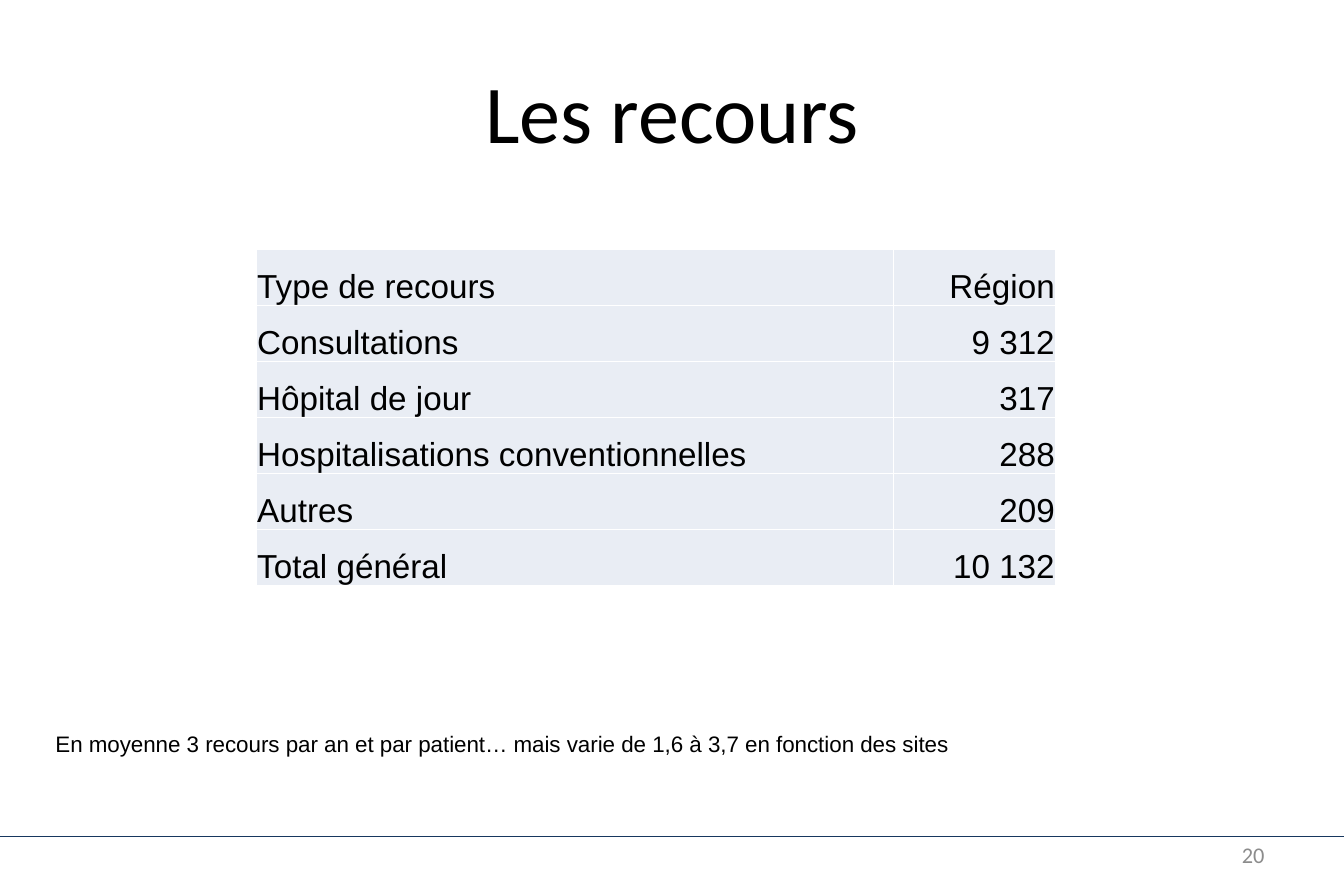
from lxml.etree import SubElement
from pptx import Presentation
from pptx.dml.color import RGBColor
from pptx.enum.shapes import MSO_CONNECTOR
from pptx.enum.text import MSO_ANCHOR, PP_ALIGN
from pptx.oxml.ns import qn
from pptx.util import Cm, Pt

ROWS = [
    ("Type de recours", "Région"),
    ("Consultations", "9 312"),
    ("Hôpital de jour", "317"),
    ("Hospitalisations conventionnelles", "288"),
    ("Autres", "209"),
    ("Total général", "10 132"),
]
WIDTHS = (13.55, 3.45)
HEIGHT = 1.19


def color(code):
    return RGBColor.from_string(code)


def write(frame, text, size, font="Arial", hue="000000", align=PP_ALIGN.LEFT):
    para = frame.paragraphs[0]
    para.alignment = align
    run = para.add_run()
    run.text = text
    run.font.size = Pt(size)
    run.font.name = font
    run.font.color.rgb = color(hue)


def add_text(slide, box, text, size, anchor=MSO_ANCHOR.MIDDLE, wrap=True, **style):
    frame = slide.shapes.add_textbox(*map(Cm, box)).text_frame
    frame.word_wrap = wrap
    frame.vertical_anchor = anchor
    write(frame, text, size, **style)


def add_rule(slide, left, right, top):
    rule = slide.shapes.add_connector(
        MSO_CONNECTOR.STRAIGHT, Cm(left), Cm(top), Cm(right), Cm(top))
    rule.line.color.rgb = color("17375E")
    rule.line.width = Pt(0.25)
    SubElement(rule._element.spPr, qn("a:effectLst"))


def set_edges(cell, hue, width):
    props = cell._tc.get_or_add_tcPr()
    for side in ("lnL", "lnR", "lnT", "lnB"):
        edge = SubElement(props, qn(f"a:{side}"), w=str(Pt(width)))
        fill = SubElement(edge, qn("a:solidFill"))
        SubElement(fill, qn("a:srgbClr"), val=hue)


def fill_cell(cell, text, align):
    cell.margin_left = cell.margin_right = cell.margin_top = Cm(0.02)
    cell.margin_bottom = Cm(0)
    cell.vertical_anchor = MSO_ANCHOR.BOTTOM
    set_edges(cell, "FFFFFF", 1)
    cell.fill.solid()
    cell.fill.fore_color.rgb = color("E9EDF4")
    write(cell.text_frame, text, 20, align=align)


def add_grid(slide, left, top):
    table = slide.shapes.add_table(
        len(ROWS), len(WIDTHS), Cm(left), Cm(top),
        Cm(sum(WIDTHS)), Cm(HEIGHT * len(ROWS))).table
    table.first_row = table.horz_banding = False
    for column, width in zip(table.columns, WIDTHS):
        column.width = Cm(width)
    for row, texts in zip(table.rows, ROWS):
        row.height = Cm(HEIGHT)
        for cell, text, align in zip(row.cells, texts, (PP_ALIGN.LEFT, PP_ALIGN.RIGHT)):
            fill_cell(cell, text, align)


def main():
    deck = Presentation()
    deck.slide_width, deck.slide_height = Cm(28.58), Cm(19.05)
    slide = deck.slides.add_slide(deck.slide_layouts[6])

    # Footer rule and page number
    add_rule(slide, 0, 28.63, 17.78)
    add_text(slide, (20.48, 17.65, 6.66, 1.02), "20", 13.5,
             font="Calibri", hue="8C8C8C", align=PP_ALIGN.RIGHT)

    # Title
    add_text(slide, (1.43, 0.76, 25.72, 3.18), "Les recours", 49.5,
             font="Calibri", align=PP_ALIGN.CENTER)

    # Table of visits
    add_grid(slide, 5.45, 5.31)

    # Note under the table
    add_text(slide, (0.93, 15.39, 19.79, 0.83),
             "En moyenne 3 recours par an et par patient… "
             "mais varie de 1,6 à 3,7 en fonction des sites",
             13.5, anchor=MSO_ANCHOR.TOP, wrap=False)

    deck.save("out.pptx")


if __name__ == "__main__":
    main()
